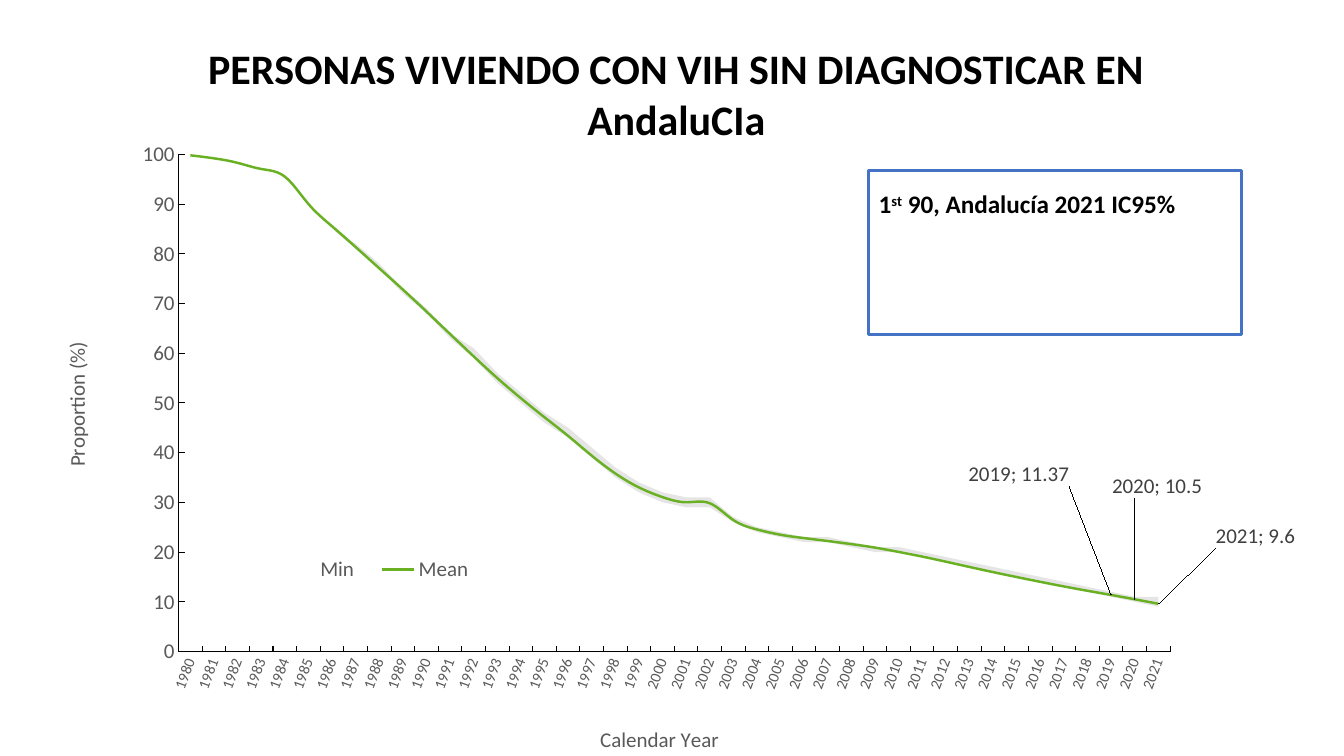
from pptx import Presentation
from pptx.chart.data import CategoryChartData
from pptx.dml.color import RGBColor
from pptx.enum.chart import XL_CHART_TYPE as ChartType, XL_LABEL_POSITION as LabelPos
from pptx.enum.chart import XL_LEGEND_POSITION as LegendPos, XL_MARKER_STYLE as Marker
from pptx.enum.chart import XL_TICK_MARK as Tick
from pptx.enum.shapes import MSO_SHAPE as Shape
from pptx.enum.text import MSO_AUTO_SIZE as AutoSize
from pptx.oxml.ns import qn
from pptx.util import Pt

BLACK = RGBColor(0, 0, 0)
GREY = RGBColor(0x59, 0x59, 0x59)
DARK = RGBColor(0x40, 0x40, 0x40)
BAND = RGBColor(0x80, 0x80, 0x80)
GREEN = RGBColor(0x69, 0xB0, 0x23)
BLUE = RGBColor(0x44, 0x72, 0xC4)

BASE = {"name": "Arial", "size": Pt(10)}
TITLE = {"name": "Calibri", "size": Pt(30), "bold": True}
AXIS = {"name": "Calibri", "size": Pt(15), "bold": False}
YEARS = {"name": "Calibri", "size": Pt(11)}
NOTE = {"name": "Calibri", "size": Pt(18), "bold": True}

MINIMUM = [100, 99, 98, 97, 95, 90, 85, 81, 77, 72, 68, 63, 59, 54, 50, 46, 43, 39, 35, 32, 30,
           29, 29, 26, 24, 23, 22, 22, 21, 20, 20, 19, 18, 17, 16, 15, 14, 13, 12, 11, 10, 9]
WIDTH = [0] * 7 + [1] * 5 + [2] * 11 + [1] * 18 + [2]
MEAN = [99.78, 99.17, 98.26, 97.03, 95.48, 90, 85.51, 81.33, 77.06, 72.79, 68.36, 63.85, 59.35,
        54.99, 50.93, 47.1, 43.35, 39.38, 35.8, 32.99, 31.04, 30.01, 29.81, 26.44, 24.54, 23.47,
        22.8, 22.21, 21.59, 20.89, 20.02, 19.08, 18.06, 17, 15.96, 14.97, 14.01, 13.08, 12.21,
        11.37, 10.5, 9.6]
# Point index: label shift as a share of the chart width and height
LABELS = {39: (-0.11, -0.16), 40: (-0.02, -0.15), 41: (0.04, -0.09)}

C15 = "{http://schemas.microsoft.com/office/drawing/2012/chart}"
LEADER_URI = "{CE6537A1-D6FC-4f65-9D91-7224C49458BB}"


def set_format(target, values, color=None):
    for key, value in values.items():
        setattr(target, key, value)
    if color is not None:
        target.color.rgb = color


def put(parent, tag, index=None, **attrs):
    """Insert a new child element, last unless an index is given."""
    el = parent.makeelement(tag if tag.startswith("{") else qn(tag), attrs)
    parent.insert(len(parent) if index is None else index, el)
    return el


def place(el, index, **values):
    """Give a chart part a manual layout."""
    old = el.find(qn("c:layout"))
    if old is not None:
        el.remove(old)
    layout = put(put(el, "c:layout", index), "c:manualLayout")
    for tag, value in values.items():
        put(layout, f"c:{tag}", val=str(value))


def move_to_line(chart):
    """Move the last area series into a line plot on the same axes."""
    area = chart.plots[0]._element
    line = area.makeelement(qn("c:lineChart"))
    put(line, "c:grouping", val="standard")
    put(line, "c:varyColors", val="0")
    line.append(area.findall(qn("c:ser"))[-1])
    put(line, "c:marker", val="1")
    for ax in area.findall(qn("c:axId")):
        put(line, "c:axId", val=ax.get("val"))
    area.addnext(line)
    return chart.plots[1].series[0]


class SlideBuilder:
    def __init__(self, prs):
        self.s = prs.slides.add_slide(prs.slide_layouts[6])

    def chart(self, x, y, w, h, title):
        data = CategoryChartData()
        data.categories = [str(year) for year in range(1980, 2022)]
        for name, values in (("Min", MINIMUM), ("Series 2", WIDTH), ("Mean", MEAN)):
            data.add_series(name, values)
        chart = self.s.shapes.add_chart(ChartType.AREA_STACKED, Pt(x), Pt(y), Pt(w), Pt(h), data).chart
        set_format(chart.font, BASE, BLACK)
        self.title(chart.chart_title, title, TITLE, BLACK)
        place(chart._chartSpace.chart.plotArea, 0, layoutTarget="inner", xMode="edge",
              yMode="edge", x=0.127, y=0.189, w=0.743, h=0.657)
        self.bands(chart)
        self.axis(chart.category_axis, "Calendar Year", YEARS, 0.75, 0.44, 0.938)
        self.axis(chart.value_axis, "Proportion (%)", AXIS, 0.5, 0.037, 0.432)
        chart.category_axis._element.find(qn("c:txPr")).find(qn("a:bodyPr")).set("rot", "-4200000")
        set_format(chart.value_axis, {"minimum_scale": 0, "maximum_scale": 100, "major_unit": 10})
        set_format(chart.value_axis.tick_labels,
                   {"number_format": "#,##0", "number_format_is_linked": False})
        self.legend(chart)

    def title(self, title, text, style, color):
        r = title.text_frame.paragraphs[0].add_run()
        r.text = text
        set_format(r.font, style, color)

    def bands(self, chart):
        self.mean(move_to_line(chart))
        chart.plots[0].vary_by_categories = False
        low, band = chart.plots[0].series
        low.format.fill.background()
        band.format.fill.solid()
        band.format.fill.fore_color.rgb = BAND
        put(next(band._element.iter(qn("a:srgbClr"))), "a:alpha", val="20000")

    def mean(self, series):
        series.smooth = True
        series.marker.style = Marker.NONE
        set_format(series.format.line, {"width": Pt(1.75)}, GREEN)
        series.data_labels.show_value = False
        for i, (dx, dy) in LABELS.items():
            label = series.points[i].data_label
            set_format(label.font, AXIS, DARK)
            label.position = LabelPos.RIGHT
            el = label._get_or_add_dLbl()
            place(el, 1, x=dx, y=dy)
            el.find(qn("c:showCatName")).set("val", "1")
            put(el, "c:separator").text = "; "
        ext = put(put(series.data_labels._element, "c:extLst"), "c:ext", uri=LEADER_URI)
        put(ext, C15 + "showLeaderLines", val="1")

    def axis(self, axis, text, style, width, x, y):
        set_format(axis, {"has_major_gridlines": False, "major_tick_mark": Tick.INSIDE,
                          "minor_tick_mark": Tick.NONE})
        set_format(axis.format.line, {"width": Pt(width)}, BLACK)
        set_format(axis.tick_labels.font, style, GREY)
        self.title(axis.axis_title, text, AXIS, GREY)
        place(axis.axis_title._element, 1, xMode="edge", yMode="edge", x=x, y=y)
        cross = axis._element.find(qn("c:crossBetween"))
        if cross is not None:
            cross.set("val", "between")

    def legend(self, chart):
        chart.has_legend = True
        legend = chart.legend
        set_format(legend, {"position": LegendPos.RIGHT, "include_in_layout": False})
        set_format(legend.font, AXIS, GREY)
        entry = put(legend._element, "c:legendEntry", 1)
        put(entry, "c:idx", val="1")
        put(entry, "c:delete", val="1")
        place(legend._element, 2, xMode="edge", yMode="edge", x=0.19, y=0.715, w=0.17, h=0.045)

    def text(self, x, y, w, h, runs):
        """Add one line of (text, baseline percent) runs."""
        tf = self.s.shapes.add_textbox(Pt(x), Pt(y), Pt(w), Pt(h)).text_frame
        set_format(tf, {"word_wrap": True, "auto_size": AutoSize.SHAPE_TO_FIT_TEXT})
        for text, baseline in runs:
            r = tf.paragraphs[0].add_run()
            r.text = text
            set_format(r.font, NOTE, BLACK)
            if baseline:
                r.font._element.set("baseline", str(baseline * 1000))

    def frame(self, x, y, w, h):
        sp = self.s.shapes.add_shape(Shape.RECTANGLE, Pt(x), Pt(y), Pt(w), Pt(h))
        sp.shadow.inherit = False
        sp.fill.background()
        set_format(sp.line, {"width": Pt(2)}, BLUE)


def main():
    prs = Presentation()
    prs.slide_width, prs.slide_height = Pt(960), Pt(540)
    slide = SlideBuilder(prs)
    slide.chart(6.5, 8, 953.3, 540.7, "PERSONAS VIVIENDO CON VIH SIN DIAGNOSTICAR EN AndaluCIa")
    slide.text(620.6, 131, 266.4, 29, [("1", 0), ("st", 30), (" 90, Andalucía 2021 IC95%", 0)])
    slide.frame(620.6, 121.7, 266.4, 117.4)
    prs.save("out.pptx")


if __name__ == "__main__":
    main()
